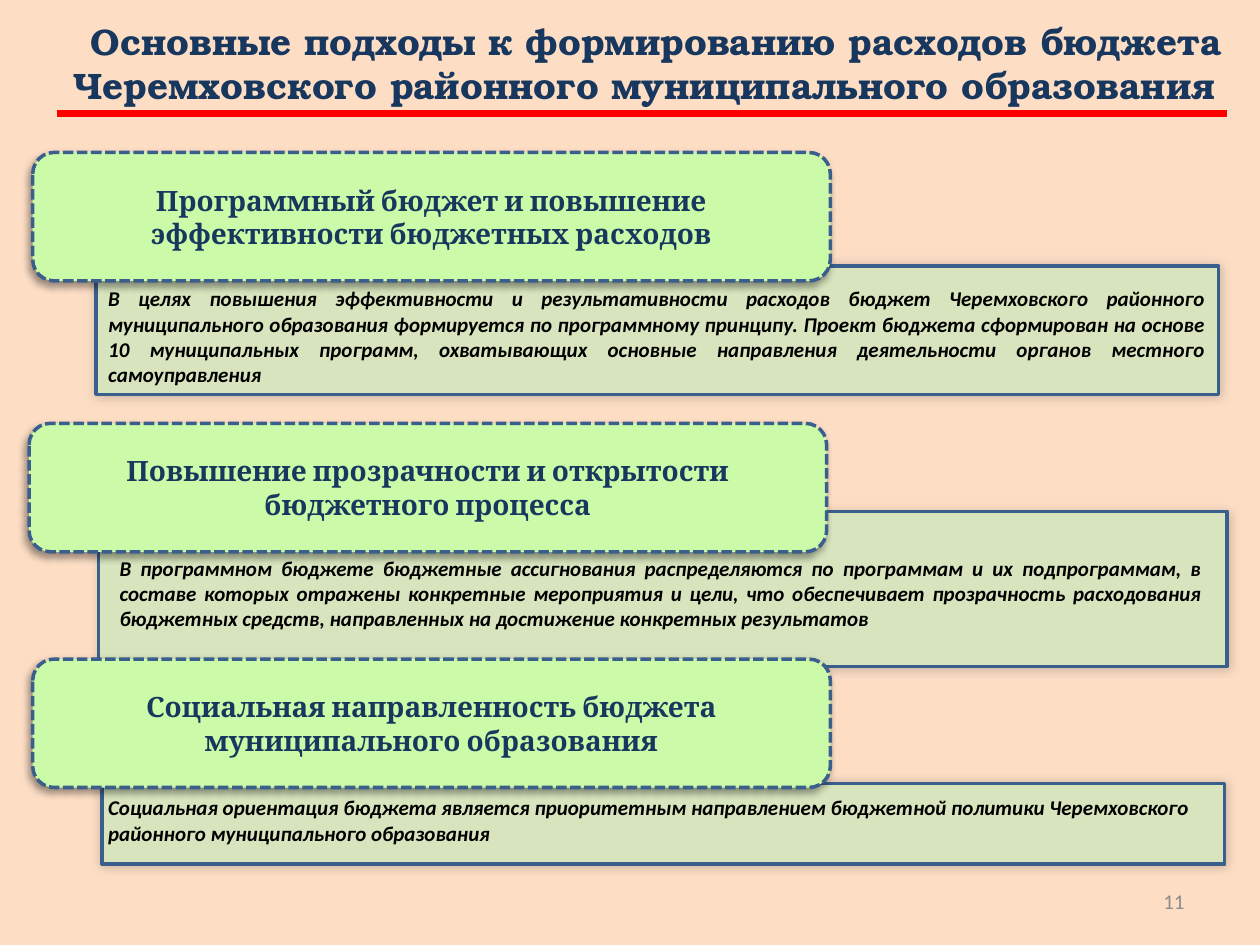
import lxml.etree
import pptx
import pptx.dml.color
import pptx.enum.dml
import pptx.enum.shapes
import pptx.enum.text
import pptx.oxml.ns
import pptx.util

Pt = pptx.util.Pt
Align = pptx.enum.text.PP_ALIGN
Anchor = pptx.enum.text.MSO_ANCHOR
Fit = pptx.enum.text.MSO_AUTO_SIZE
Kind = pptx.enum.shapes.MSO_SHAPE
Dash = pptx.enum.dml.MSO_LINE
qn = pptx.oxml.ns.qn

NAVY, GREEN, OLIVE, BLUE = "17375E", "CBFAA8", "D7E4BD", "3A5F8C"
TITLE = {"name": "TeX Gyre Bonum", "size": Pt(21), "bold": True}
HEAD = {"name": "Cambria", "size": Pt(16), "bold": True}
BODY = {"name": "Calibri", "size": Pt(12), "bold": True, "italic": True}
PAGE = {"name": "Calibri", "size": Pt(12)}
CARD = (455.8, 73.4)

PARTS = [
    {
        "head": ["Программный бюджет и повышение эффективности бюджетных расходов"],
        "card": (18.7, 87.1),
        "panel": (54.7, 151.9, 641.5, 73.4),
        "text": (54.7, 159.8, 641.5, 65.5),
        "body": "В целях повышения эффективности и результативности расходов бюджет "
                "Черемховского районного муниципального образования формируется по "
                "программному принципу. Проект бюджета сформирован на основе 10 "
                "муниципальных программ, охватывающих основные направления "
                "деятельности органов местного самоуправления",
        "align": Align.JUSTIFY,
    },
    {
        "head": ["Повышение прозрачности и открытости", "бюджетного процесса"],
        "card": (16.6, 241.9),
        "panel": (56.2, 292.3, 645.1, 88.6),
        "text": (61.2, 296.6, 632.9, 67.7),
        "body": "В программном бюджете бюджетные ассигнования распределяются по "
                "программам и их подпрограммам, в составе которых отражены конкретные "
                "мероприятия и цели, что обеспечивает прозрачность расходования "
                "бюджетных средств, направленных на достижение конкретных результатов",
        "align": Align.JUSTIFY,
        "top": 20.6,
        "fill": OLIVE,
    },
    {
        "head": ["Социальная направленность бюджета", "муниципального образования"],
        "card": (18.7, 376.6),
        "panel": (58.3, 447.8, 641.5, 46.1),
        "text": (54.7, 450.7, 641.5, 36),
        "body": "Социальная ориентация бюджета является приоритетным направлением "
                "бюджетной политики Черемховского районного муниципального образования",
        "align": Align.LEFT,
    },
]


def paint(item, tint):
    """Give a fill or a font a solid hex colour."""
    if hasattr(item, "solid"):
        item.solid()
        item.fore_color.rgb = pptx.dml.color.RGBColor.from_string(tint)
    else:
        item.color.rgb = pptx.dml.color.RGBColor.from_string(tint)


def write(frame, lines, font, tint, align, **form):
    """Fill a text frame with evenly formatted paragraphs."""
    for key, value in {"word_wrap": True, **form}.items():
        setattr(frame, key, value)
    for pos, line in enumerate(lines):
        para = frame.paragraphs[0] if pos == 0 else frame.add_paragraph()
        para.alignment = align
        run = para.add_run()
        run.text = line
        for key, value in font.items():
            setattr(run.font, key, value)
        paint(run.font, tint)


def label(slide, area, lines, font, tint, align, **form):
    """Add a text box and return it."""
    box = slide.shapes.add_textbox(*map(Pt, area))
    write(box.text_frame, lines, font, tint, align, **form)
    return box


def shade(shape, blur, dist, angle, alpha):
    """Give a shape a soft black outer shadow."""
    shape.shadow.inherit = False
    effects = shape._element.spPr.find(qn("a:effectLst"))
    outer = lxml.etree.SubElement(
        effects, qn("a:outerShdw"), blurRad=str(Pt(blur)), dist=str(Pt(dist)),
        dir=str(angle * 60000), algn="ctr", rotWithShape="0")
    black = lxml.etree.SubElement(outer, qn("a:srgbClr"), val="000000")
    lxml.etree.SubElement(black, qn("a:alpha"), val=str(alpha * 1000))


def block(slide, kind, area, tint, glow):
    """Add a filled, outlined shape with a shadow."""
    shape = slide.shapes.add_shape(kind, *map(Pt, area))
    paint(shape.fill, tint)
    paint(shape.line.fill, BLUE)
    shape.line.width = Pt(2)
    shade(shape, *glow)
    return shape


def section(slide, part):
    """Add a panel with its text and the heading card above it."""
    block(slide, Kind.FLOWCHART_PROCESS, part["panel"], OLIVE, (6, 0, 225, 20))
    box = label(slide, part["text"], [part["body"]], BODY, "000000", part["align"],
                margin_top=Pt(part.get("top", 3.6)), auto_size=Fit.SHAPE_TO_FIT_TEXT)
    if "fill" in part:
        paint(box.fill, part["fill"])
    card = block(slide, Kind.FLOWCHART_ALTERNATE_PROCESS, part["card"] + CARD,
                 GREEN, (4, 3, 135, 40))
    card.line.dash_style = Dash.SQUARE_DOT
    card.line._ln.find(qn("a:prstDash")).set("val", "sysDash")
    write(card.text_frame, part["head"], HEAD, NAVY, Align.CENTER,
          vertical_anchor=Anchor.MIDDLE)


def rule(slide, start, end, tint, width):
    """Add a straight line without a shadow."""
    line = slide.shapes.add_connector(
        pptx.enum.shapes.MSO_CONNECTOR.STRAIGHT, *map(Pt, start + end))
    paint(line.line.fill, tint)
    line.line.width = Pt(width)
    lxml.etree.SubElement(line._element.spPr, qn("a:effectLst"))


def main():
    """Build and save the slide."""
    deck = pptx.Presentation()
    deck.slide_width, deck.slide_height = Pt(720), Pt(540)
    slide = deck.slides.add_slide(deck.slide_layouts[6])
    paint(slide.background.fill, "FDDEC5")
    title = label(
        slide, (16.6, 8, 703.4, 56),
        ["Основные подходы к формированию расходов бюджета "
         "Черемховского районного муниципального образования"],
        TITLE, NAVY, Align.CENTER, vertical_anchor=Anchor.MIDDLE)
    first = title.text_frame.paragraphs[0]._p.get_or_add_pPr()
    first.set("indent", str(Pt(14)))
    rule(slide, (32.4, 64.8), (701.3, 64.8), "FF0000", 3.75)
    for part in PARTS:
        section(slide, part)
    label(slide, (516.2, 500.4, 167.8, 28.8), ["11"], PAGE, "8C8C8C", Align.RIGHT,
          vertical_anchor=Anchor.MIDDLE)
    deck.save("out.pptx")


if __name__ == "__main__":
    main()
